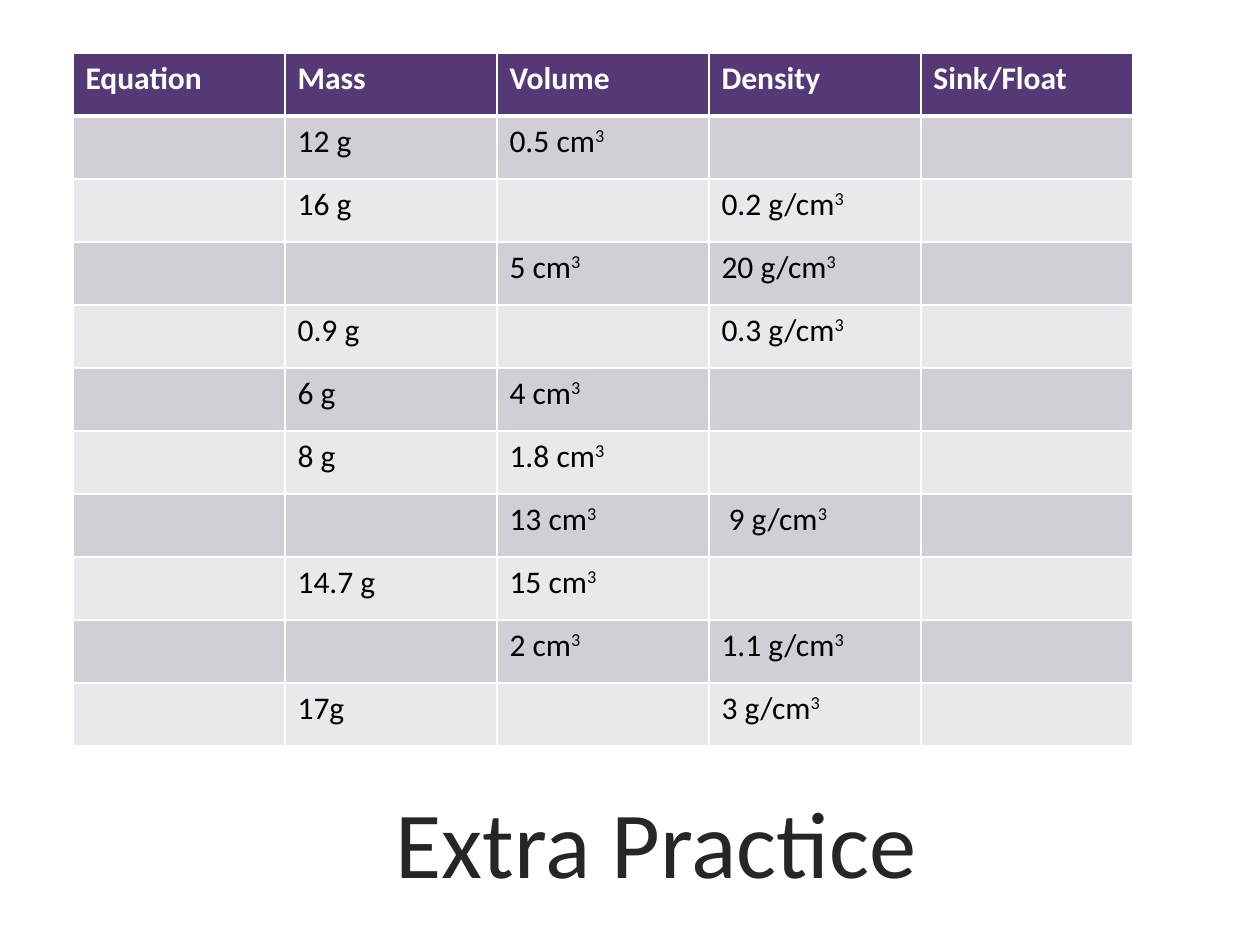
import dataclasses

import lxml.etree
import pptx
import pptx.dml.color
import pptx.enum.text
import pptx.oxml.ns
import pptx.util

EMU_PER_PX = 914400 / 126


@dataclasses.dataclass(frozen=True)
class Theme:
    font: str = "Calibri"
    title_size: int = 54
    table_size: int = 18
    title: str = "262626"
    header_text: str = "FFFFFF"
    body_text: str = "000000"
    header_fill: str = "553876"
    bands: tuple[str, str] = ("D1CED6", "E9E8EC")
    border: str = "FFFFFF"
    thin: int = 1
    thick: int = 3


@dataclasses.dataclass(frozen=True)
class Box:
    left: int
    top: int
    width: int
    height: int

    def emu(self) -> list[pptx.util.Emu]:
        return [px(side) for side in dataclasses.astuple(self)]


@dataclasses.dataclass(frozen=True)
class Problem:
    """One practice row; volume and density units end in a cubed length."""
    mass: str = ""
    volume: str = ""
    density: str = ""


THEME = Theme()
TITLE_BOX = Box(126, 788, 1060, 106)
TABLE_BOX = Box(73, 53, 1060, 693)
HEADINGS = ("Equation", "Mass", "Volume", "Density", "Sink/Float")
PROBLEMS = (
    Problem(mass="12 g", volume="0.5 cm"),
    Problem(mass="16 g", density="0.2 g/cm"),
    Problem(volume="5 cm", density="20 g/cm"),
    Problem(mass="0.9 g", density="0.3 g/cm"),
    Problem(mass="6 g", volume="4 cm"),
    Problem(mass="8 g", volume="1.8 cm"),
    Problem(volume="13 cm", density=" 9 g/cm"),
    Problem(mass="14.7 g", volume="15 cm"),
    Problem(volume="2 cm", density="1.1 g/cm"),
    Problem(mass="17g", density="3 g/cm"),
)


def px(length: int) -> pptx.util.Emu:
    return pptx.util.Emu(round(length * EMU_PER_PX))


def style_runs(paragraph, size: int, color: str, bold: bool = False) -> None:
    for run in paragraph.runs:
        run.font.name = THEME.font
        run.font.size = pptx.util.Pt(size)
        run.font.bold = bold
        run.font.color.rgb = pptx.dml.color.RGBColor.from_string(color)


def add_border(cell, edge: str, points: int) -> None:
    qn = pptx.oxml.ns.qn
    line = lxml.etree.SubElement(cell._tc.get_or_add_tcPr(), qn(f"a:ln{edge}"),
                                 w=str(pptx.util.Pt(points)))
    fill = lxml.etree.SubElement(line, qn("a:solidFill"))
    lxml.etree.SubElement(fill, qn("a:srgbClr"), val=THEME.border)


def paint_cell(cell, fill: str, top: int, bottom: int) -> None:
    for edge, points in zip("LRTB", (THEME.thin, THEME.thin, top, bottom)):
        add_border(cell, edge, points)
    cell.fill.solid()
    cell.fill.fore_color.rgb = pptx.dml.color.RGBColor.from_string(fill)


def write_cell(cell, words: str, color: str, bold: bool = False,
               cubed: bool = False) -> None:
    if not words:
        return
    entry = cell.text_frame.paragraphs[0]
    entry.text = words
    if cubed:
        exponent = entry.add_run()
        exponent.text = "3"
        exponent.font._element.set("baseline", "30000")
    style_runs(entry, THEME.table_size, color, bold)


def add_practice_table(slide) -> None:
    table = slide.shapes.add_table(
        len(PROBLEMS) + 1, len(HEADINGS), *TABLE_BOX.emu()).table
    for column in table.columns:
        column.width = px(TABLE_BOX.width // len(HEADINGS))
    for row in table.rows:
        row.height = px(TABLE_BOX.height // (len(PROBLEMS) + 1))

    # Header row
    for column, heading in enumerate(HEADINGS):
        cell = table.cell(0, column)
        paint_cell(cell, THEME.header_fill, THEME.thin, THEME.thick)
        write_cell(cell, heading, THEME.header_text, bold=True)

    # Banded practice rows, with equation and answer left open
    for number, problem in enumerate(PROBLEMS, start=1):
        band = THEME.bands[(number - 1) % 2]
        top = THEME.thick if number == 1 else THEME.thin
        entries = ("", problem.mass, problem.volume, problem.density, "")
        for column, words in enumerate(entries):
            cell = table.cell(number, column)
            paint_cell(cell, band, top, THEME.thin)
            write_cell(cell, words, THEME.body_text,
                       cubed=HEADINGS[column] in ("Volume", "Density"))


def add_title(slide) -> None:
    frame = slide.shapes.add_textbox(*TITLE_BOX.emu()).text_frame
    frame.word_wrap = True
    frame.vertical_anchor = pptx.enum.text.MSO_ANCHOR.MIDDLE
    frame.text = "Extra Practice"
    heading = frame.paragraphs[0]
    heading.alignment = pptx.enum.text.PP_ALIGN.CENTER
    style_runs(heading, THEME.title_size, THEME.title)


def main() -> None:
    deck = pptx.Presentation()
    deck.slide_width, deck.slide_height = px(1260), px(945)
    slide = deck.slides.add_slide(deck.slide_layouts[6])
    add_title(slide)
    add_practice_table(slide)
    deck.save("out.pptx")


if __name__ == "__main__":
    main()
